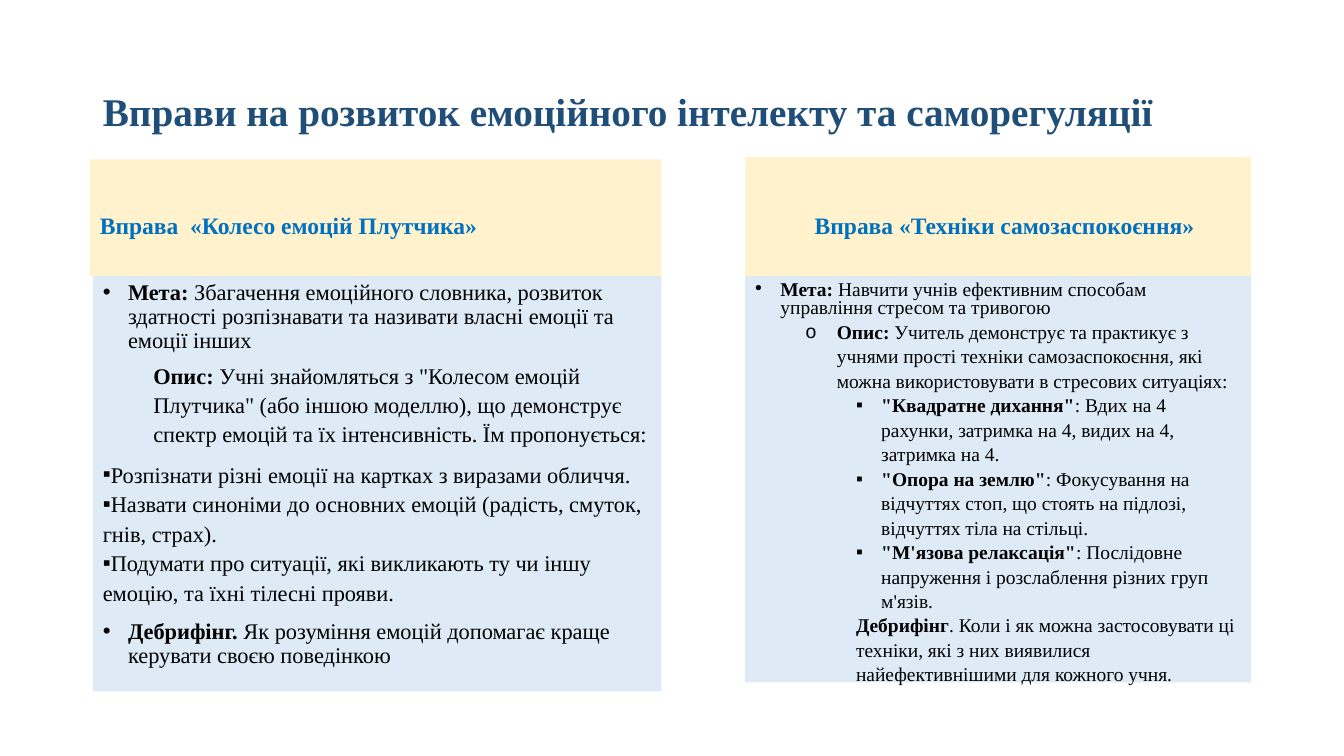
from dataclasses import dataclass
from typing import Any

from lxml.etree import SubElement
from pptx import Presentation
from pptx.dml.color import RGBColor
from pptx.enum.text import MSO_ANCHOR, MSO_AUTO_SIZE, PP_ALIGN
from pptx.oxml.ns import qn
from pptx.util import Inches, Pt

HUES = {"title": "1F4E79", "head": "0070C0", "text": "000000",
        "cream": "FFF2CC", "sky": "DEEBF7"}
FACE = "Times New Roman"


@dataclass
class Style:
    space: float = 1.0
    before: float = 0
    after: float = 0
    left: float = 0
    hang: float = 0
    mark: str = ""
    level: int = 0


@dataclass
class Item:
    lead: str
    rest: str
    style: Style


@dataclass
class Panel:
    slot: int
    area: tuple[float, float, float, float]
    size: float
    items: list[Item]
    hue: str = "text"
    fill: str = ""
    anchor: Any = MSO_ANCHOR.TOP
    inset: float = 0.1
    base: float = 0.05


def assign(target: Any, values: dict[str, Any]) -> None:
    for name, value in values.items():
        setattr(target, name, value)


def add_run(para: Any, text: str, bold: bool, panel: Panel) -> None:
    run = para.add_run()
    run.text = text
    assign(run.font, {"name": FACE, "size": Pt(panel.size), "bold": bold})
    run.font.color.rgb = RGBColor.from_string(HUES[panel.hue])


def add_item(para: Any, item: Item, panel: Panel) -> None:
    style = item.style
    assign(para, {"level": style.level, "alignment": PP_ALIGN.LEFT,
                  "line_spacing": style.space, "space_before": Pt(style.before),
                  "space_after": Pt(style.after)})
    props = para._p.get_or_add_pPr()
    props.set("marL", str(Inches(style.left)))
    props.set("indent", str(Inches(-style.hang)))
    if style.mark:
        SubElement(props, qn("a:buChar")).set("char", style.mark)
    else:
        SubElement(props, qn("a:buNone"))
    add_run(para, item.lead, True, panel) if item.lead else None
    add_run(para, item.rest, False, panel) if item.rest else None


def draw(slide: Any, panel: Panel) -> None:
    shape = slide.placeholders[panel.slot]
    sides = ("left", "top", "width", "height")
    assign(shape, dict(zip(sides, map(Inches, panel.area))))
    if panel.fill:
        shape.fill.solid()
        shape.fill.fore_color.rgb = RGBColor.from_string(HUES[panel.fill])
    frame = shape.text_frame
    assign(frame, {"word_wrap": True, "auto_size": MSO_AUTO_SIZE.NONE,
                   "vertical_anchor": panel.anchor,
                   "margin_left": Inches(panel.inset), "margin_right": Inches(0.1),
                   "margin_top": Inches(0.05), "margin_bottom": Inches(panel.base)})
    for rank, item in enumerate(panel.items):
        para = frame.add_paragraph() if rank else frame.paragraphs[0]
        add_item(para, item, panel)


def head(slot: int, area: tuple[float, float, float, float], text: str,
         inset: float) -> Panel:
    return Panel(slot, area, 16.8, [Item(text, "", Style(0.87))], "head", "cream",
                 MSO_ANCHOR.BOTTOM, inset, 0.36)


GOAL = Style(0.9, 10, 0, 0.25, 0.25, "•")
TASK = Style(1.07, 5, 8, 0.5, level=1)
STEP = Style(1.1, mark="▪", level=2)
AIM = Style(0.8, 10, 0, 0.25, 0.25, "•")
PLAN = Style(1.05, left=0.81, hang=0.31, mark="o", level=1)
CALM = Style(1.05, left=1.25, hang=0.25, mark="▪", level=2)
CLOSE = Style(1.05, left=1, level=2)

WHEEL = [
    Item("Мета:", " Збагачення емоційного словника, розвиток здатності розпізнавати "
         "та називати власні емоції та емоції інших", GOAL),
    Item("Опис:", " Учні знайомляться з \"Колесом емоцій Плутчика\" (або іншою моделлю), "
         "що демонструє спектр емоцій та їх інтенсивність. Їм пропонується:", TASK),
    Item("", "Розпізнати різні емоції на картках з виразами обличчя.", STEP),
    Item("", "Назвати синоніми до основних емоцій (радість, смуток, гнів, страх).", STEP),
    Item("", "Подумати про ситуації, які викликають ту чи іншу емоцію, "
         "та їхні тілесні прояви.", STEP),
    Item("Дебрифінг.", " Як розуміння емоцій допомагає краще керувати "
         "своєю поведінкою", GOAL),
]
RELAX = [
    Item("Мета:", " Навчити учнів ефективним способам управління стресом "
         "та тривогою", AIM),
    Item("Опис:", " Учитель демонструє та практикує з учнями прості техніки "
         "самозаспокоєння, які можна використовувати в стресових ситуаціях:", PLAN),
    Item("\"Квадратне дихання\"", ": Вдих на 4 рахунки, затримка на 4, видих на 4, "
         "затримка на 4.", CALM),
    Item("\"Опора на землю\"", ": Фокусування на відчуттях стоп, що стоять на підлозі, "
         "відчуттях тіла на стільці.", CALM),
    Item("\"М'язова релаксація\"", ": Послідовне напруження і розслаблення "
         "різних груп м'язів.", CALM),
    Item("Дебрифінг", ". Коли і як можна застосовувати ці техніки, які з них виявилися "
         "найефективнішими для кожного учня.", CLOSE),
]
PANELS = [
    Panel(0, (0.92, 0.4, 11.5, 1.45), 28,
          [Item("Вправи на розвиток емоційного інтелекту та саморегуляції", "",
                Style(0.9))], "title", anchor=MSO_ANCHOR.MIDDLE),
    head(1, (0.89, 1.58, 5.67, 1.16), "Вправа  «Колесо емоцій Плутчика»", 0.1),
    Panel(2, (0.92, 2.74, 5.64, 4.12), 16, WHEEL, fill="sky"),
    head(3, (7.39, 1.56, 5.02, 1.18), "Вправа «Техніки самозаспокоєння»", 0.69),
    Panel(4, (7.39, 2.74, 5.02, 4.03), 13.9, RELAX, fill="sky"),
]


def main() -> None:
    deck = Presentation()
    assign(deck, {"slide_width": Inches(13.33), "slide_height": Inches(7.5)})
    slide = deck.slides.add_slide(deck.slide_layouts[4])
    for panel in PANELS:
        draw(slide, panel)
    deck.save("out.pptx")


if __name__ == "__main__":
    main()
